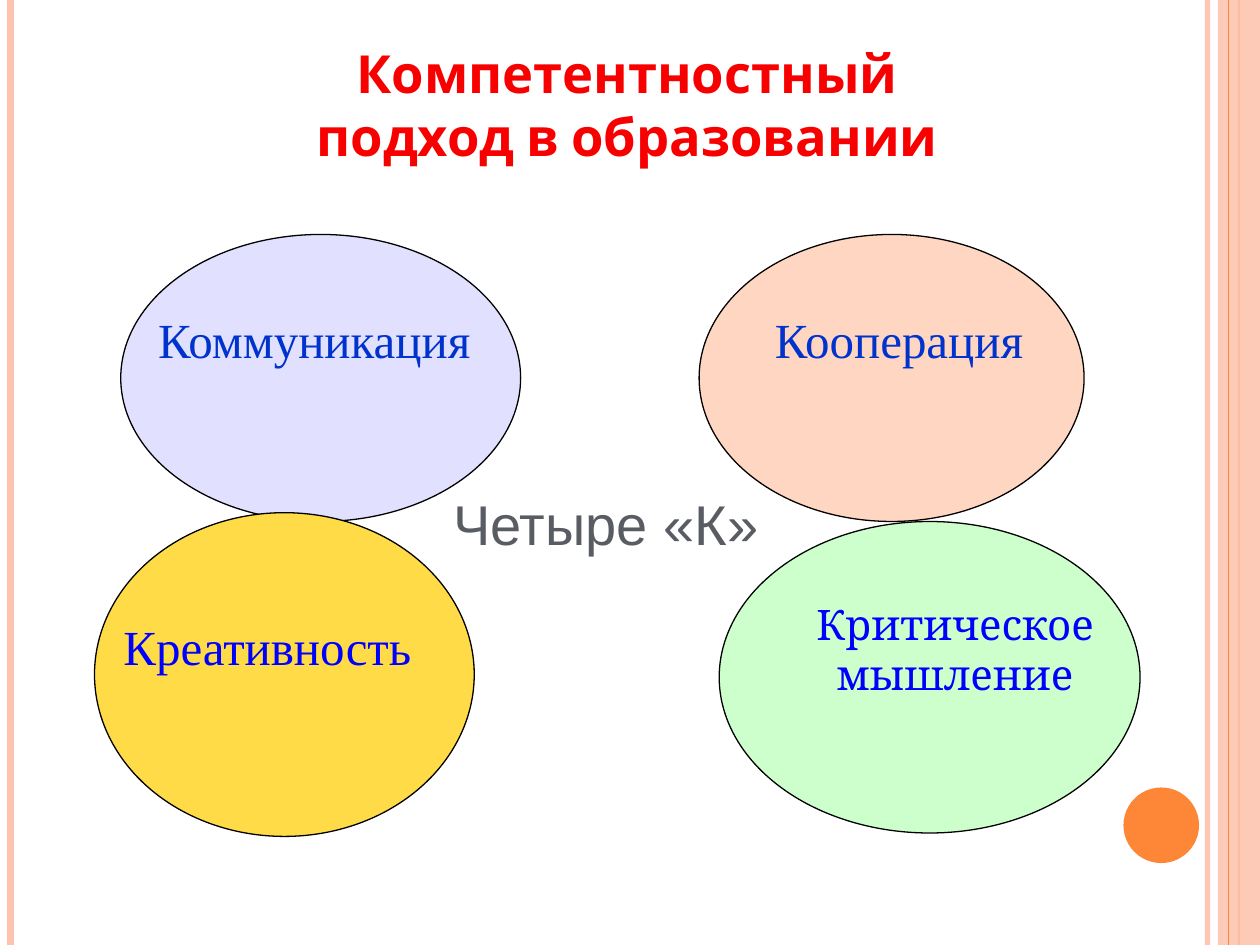
from lxml.etree import SubElement
from pptx import Presentation
from pptx.dml.color import RGBColor
from pptx.enum.shapes import MSO_CONNECTOR as Connector, MSO_SHAPE as Shape
from pptx.enum.text import MSO_ANCHOR as Anchor, MSO_AUTO_SIZE as AutoSize, PP_ALIGN as Align
from pptx.oxml.ns import qn
from pptx.util import Pt

COLORS = {
    "peach": "FEC3AE", "orange": "FE8637", "black": "000000",
    "salmon": "FFD6C1", "lavender": "E1E1FF", "yellow": "FFDC47", "mint": "CCFFCC",
    "royal": "0033CC", "blue": "0000FF", "red": "F80000", "gray": "595D63",
}
WIDTH, HEIGHT = 720, 540


class SlideBuilder:
    def __init__(self, page):
        self.page = page

    def color(self, name):
        return RGBColor.from_string(COLORS[name])

    def fade(self, properties, percent):
        node = properties.find(qn("a:solidFill"))[0]
        SubElement(node, qn("a:alpha"), val=str(percent * 1000))

    def stripe(self, x, color, width, opacity=100):
        line = self.page.shapes.add_connector(Connector.STRAIGHT, Pt(x), Pt(0), Pt(x), Pt(HEIGHT))
        line.line.color.rgb = self.color(color)
        line.line.width = Pt(width)
        properties = line._element.spPr
        if opacity < 100:
            self.fade(properties.find(qn("a:ln")), opacity)
        SubElement(properties, qn("a:effectLst"))

    def shape(self, kind, bounds, fill, outline=None, opacity=100, parent=None):
        shape = (parent or self.page).shapes.add_shape(kind, *map(Pt, bounds))
        shape.shadow.inherit = False
        shape.fill.solid()
        shape.fill.fore_color.rgb = self.color(fill)
        if opacity < 100:
            self.fade(shape._element.spPr, opacity)
        if outline:
            shape.line.color.rgb = self.color(outline)
            shape.line.width = Pt(0.75)
        else:
            shape.line.fill.background()

    def fill_text(self, box, text, font, size, color, bold=False, align=Align.CENTER):
        frame = box.text_frame
        frame.word_wrap = True
        frame.auto_size = AutoSize.NONE
        frame.vertical_anchor = Anchor.TOP
        frame.text = text
        para = frame.paragraphs[0]
        para.alignment = align
        para.font.name = font
        para.font.size = Pt(size)
        para.font.bold = bold
        para.font.color.rgb = self.color(color)
        return para

    def text(self, bounds, *style, parent=None, **options):
        box = (parent or self.page).shapes.add_textbox(*map(Pt, bounds))
        return self.fill_text(box, *style, **options)

    def title(self, bounds, *style):
        title = self.page.shapes.title
        title.left, title.top, title.width, title.height = map(Pt, bounds)
        self.fill_text(title, *style, bold=True).line_spacing = 1

    def skill(self, oval, fill, label, *style):
        group = self.page.shapes.add_group_shape()
        self.shape(Shape.OVAL, oval, fill, "black", parent=group)
        return self.text(label, *style, parent=group)


def main():
    deck = Presentation()
    deck.slide_width, deck.slide_height = Pt(WIDTH), Pt(HEIGHT)
    slide = SlideBuilder(deck.slides.add_slide(deck.slide_layouts[5]))

    slide.stripe(690, "peach", 3, 93)
    slide.stripe(6, "peach", 4.5)
    slide.stripe(708, "orange", 1.5)
    slide.shape(Shape.RECTANGLE, (696, 0, 24, HEIGHT), "peach", opacity=87)
    slide.stripe(702, "orange", 0.75)
    slide.shape(Shape.OVAL, (642, 450, 43.2, 43.2), "orange")

    serif = "Times New Roman"
    cooperation = slide.skill((399.5, 134, 220, 164), "salmon", (405.5, 173.5, 216.5, 68),
                              "Кооперация", serif, 28, "royal")
    cooperation.space_before = Pt(4)
    slide.skill((69, 134, 228.5, 164), "lavender", (82, 173.5, 195, 104),
                "Коммуникация", serif, 28, "royal")
    creativity = slide.skill((54, 293, 217, 185), "yellow", (49, 349, 214.5, 109.5),
                             "Креативность ", serif, 28, "blue")
    creativity.space_after = Pt(3)
    slide.skill((411, 298, 240.5, 178), "mint", (437, 338.5, 217.5, 111),
                "Критическое мышление", "Cambria", 24, "blue")

    slide.title((144.5, 20, 428, 80), "Компетентностный подход в образовании", "Cabin", 30, "red")
    motto = slide.text((252, 281.5, 191, 41), "Четыре «К»", "Arial", 32, "gray", align=Align.LEFT)
    motto.line_spacing = 0.87

    deck.save("out.pptx")


if __name__ == "__main__":
    main()
